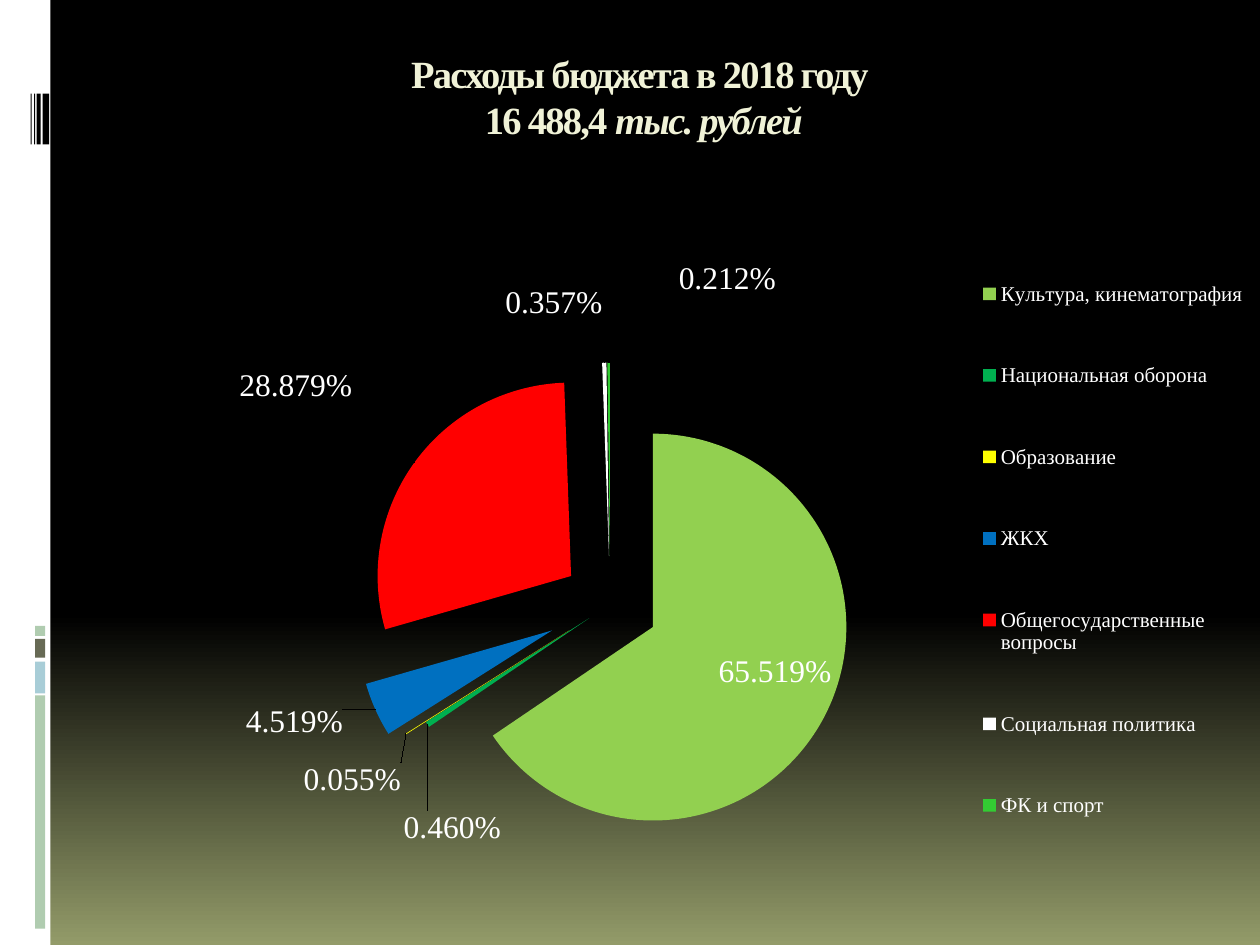
from lxml import etree
from pptx import Presentation
from pptx import util as u
from pptx.chart.data import CategoryChartData
from pptx.dml.color import RGBColor
from pptx.enum import chart as ch, shapes, text
from pptx.oxml import ns

FONT = "Times New Roman"
PERCENT = '0.000"%"'


def rgb(value):
    return RGBColor.from_string(value)


def element(tag, val=None):
    el = etree.Element(ns.qn(tag))
    if val is not None:
        el.set("val", str(val))
    return el


def layout(**settings):
    el = element("c:layout")
    manual = element("c:manualLayout")
    el.append(manual)
    for name, val in settings.items():
        manual.append(element(f"c:{name}", val))
    return el


def area(x, y, w, h, **target):
    return layout(**target, xMode="edge", yMode="edge",
                  x=x / 100, y=y / 100, w=w / 100, h=h / 100)


class Deck:
    white, black, cream, olive = "FFFFFF", "000000", "F0F2D7", "939B69"

    def __init__(self):
        self.prs = Presentation()
        self.prs.slide_width, self.prs.slide_height = u.Cm(25.4), u.Cm(19.05)
        self.s = self.prs.slides.add_slide(self.prs.slide_layouts[6])

    def background(self):
        fill = self.s.background.fill
        fill.gradient()
        fill.gradient_angle = 270
        for stop, color, position in zip(
            fill.gradient_stops, (self.black, self.olive), (0.65, 1)
        ):
            stop.color.rgb = rgb(color)
            stop.position = position

    def bar(self, x, y, w, h, color):
        sp = self.s.shapes.add_shape(
            shapes.MSO_SHAPE.RECTANGLE, u.Cm(x), u.Cm(y), u.Cm(w), u.Cm(h)
        )
        sp.shadow.inherit = False
        sp.fill.solid()
        sp.fill.fore_color.rgb = rgb(color)
        sp.line.fill.background()

    def title(self, x, y, w, h, words, unit):
        sp = self.s.shapes.add_textbox(u.Cm(x), u.Cm(y), u.Cm(w), u.Cm(h))
        tf = sp.text_frame
        tf.word_wrap = True
        tf.vertical_anchor = text.MSO_ANCHOR.TOP
        p = tf.paragraphs[0]
        p.text = words
        p.alignment = text.PP_ALIGN.CENTER
        r = p.add_run()
        r.text = unit
        r.font.italic = True
        for r in p.runs:
            self.font(r.font, 22, self.cream)
            r.font.bold = True
            r.font._element.set("spc", "-100")

    def font(self, font, size, color):
        font.name = FONT
        font.size = u.Pt(size)
        font.color.rgb = rgb(color)

    def pie(self, x, y, w, h, rows):
        data = CategoryChartData(number_format=PERCENT)
        data.categories = [row[0] for row in rows]
        data.add_series("Расходы", [row[1] for row in rows])
        chart = self.s.shapes.add_chart(
            ch.XL_CHART_TYPE.PIE, u.Cm(x), u.Cm(y), u.Cm(w), u.Cm(h), data
        ).chart
        self.font(chart.font, 18, self.white)
        chart.has_title = False
        plot = chart.plots[0]
        plot.vary_by_categories = True
        series = plot.series[0]
        for i, (_, _, color, explosion, position, dx, dy) in enumerate(rows):
            point = series.points[i]
            point.format.fill.solid()
            point.format.fill.fore_color.rgb = rgb(color)
            point.format.line.fill.background()
            label = point.data_label
            self.font(label.font, 18, self.white)
            label.position = position
            dlbl = label._get_or_add_dLbl()
            dlbl.insert(1, layout(x=dx / 100, y=dy / 100))
            dpt = series._element.findall(ns.qn("c:dPt"))[i]
            dpt.find(ns.qn("c:spPr")).addprevious(element("c:explosion", explosion))
        labels = series.data_labels
        labels.show_value = True
        labels.number_format = PERCENT
        labels.number_format_is_linked = False
        self.font(labels.font, 18, self.white)
        ser = series._element
        ser.find(ns.qn("c:dPt")).addprevious(element("c:explosion", 25))
        self.place(chart._chartSpace.chart.plotArea, 0,
                   area(4.8, 21.7, 84.3, 71.9, layoutTarget="inner"))
        chart.has_legend = True
        legend = chart.legend
        legend.position = ch.XL_LEGEND_POSITION.RIGHT
        legend.include_in_layout = False
        self.font(legend.font, 12, self.white)
        self.place(legend._element, 1, area(76, 1, 24, 97))

    def place(self, parent, index, new):
        for old in parent.findall(ns.qn("c:layout")):
            parent.remove(old)
        parent.insert(index, new)


def main():
    deck = Deck()
    deck.background()
    deck.bar(0, 0, 1.02, 19.05, deck.white)
    for y, h, color in (
        (14.02, 4.7, "B0CCB0"),
        (13.34, 0.64, "A8CDD7"),
        (12.88, 0.38, "676A55"),
        (12.62, 0.2, "B0CCB0"),
    ):
        deck.bar(0.71, y, 0.2, h, color)
    for x, w in ((0.86, 0.13), (0.74, 0.08), (0.69, 0.02), (0.62, 0.02)):
        deck.bar(x, 1.89, w, 1.02, deck.black)
    deck.title(1.27, 0.89, 23.42, 2.49,
               "Расходы бюджета в 2018 году \v16 488,4 ", "тыс. рублей")
    center = ch.XL_LABEL_POSITION.CENTER
    outside = ch.XL_LABEL_POSITION.OUTSIDE_END
    deck.pie(0.71, 4.37, 24.69, 13.56, (
        ("Культура, кинематография", 65.519, "92D050", 25, center, 3, 0),
        ("Национальная оборона", 0.46, "00B050", 13, outside, 6.5, 12.2),
        ("Образование", 0.055, "FFFF00", 25, outside, 0.1, 3.7),
        ("ЖКХ", 4.519, "0070C0", 33, outside, -2.1, -1.2),
        ("Общегосударственные вопросы", 28.879, "FF0000", 25, outside, -4.6, -8.2),
        ("Социальная политика", 0.357, "FFFFFF", 25, outside, -4.1, -5.3),
        ("ФК и спорт", 0.212, "33CC33", 25, outside, 9.7, -8.8),
    ))
    deck.prs.save("out.pptx")


if __name__ == "__main__":
    main()
